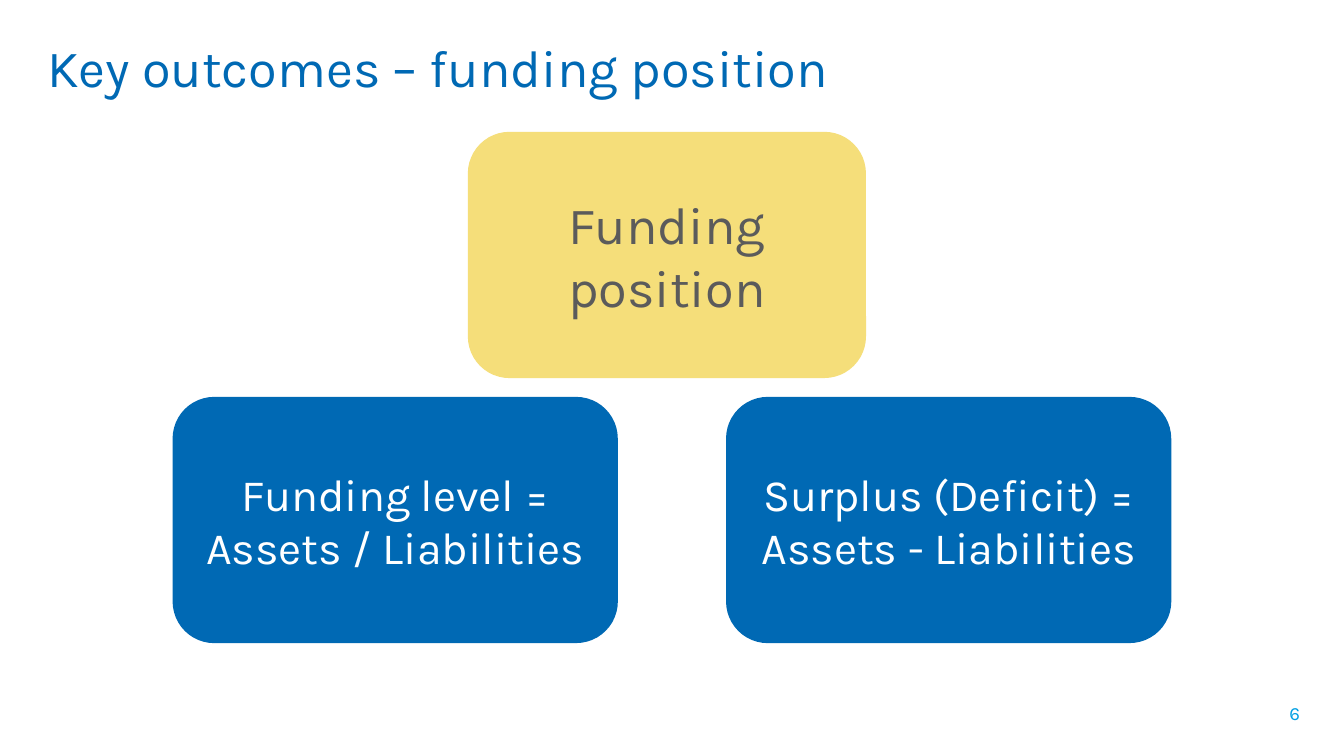
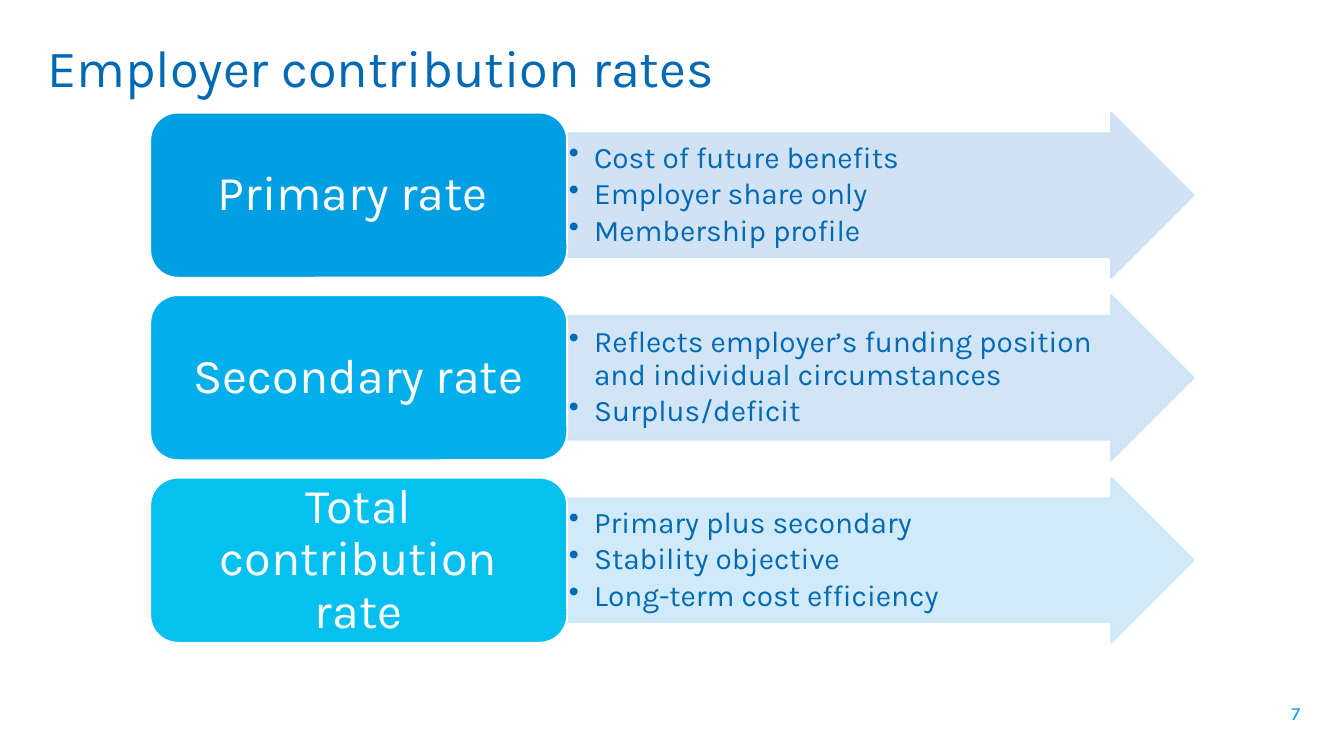
"""Build two slides on funding position and employer contribution rates."""
from lxml.etree import SubElement
from pptx import Presentation
from pptx.dml.color import RGBColor as Rgb
from pptx.enum.shapes import MSO_SHAPE as Preset
from pptx.enum.text import MSO_ANCHOR as Anchor, PP_ALIGN as Align
from pptx.oxml.ns import qn
from pptx.util import Cm, Pt

COLOURS = {
    "navy": "0069B4", "blue": "009FE3", "sky": "03AFEA", "cyan": "06C0F0",
    "yellow": "F5DE7A", "grey": "5B5B5B", "white": "FFFFFF",
    "pale navy": "CCDFF4", "pale blue": "CCE3F7", "pale cyan": "CCE8F9",
}
FONT = "Karla"


def write(frame, text, size, colour, align=Align.LEFT, anchor=Anchor.TOP,
          insets=(0.25, 0.13), spacing=None, after=0, bullet=False):
    frame.word_wrap = True
    frame.vertical_anchor = anchor
    frame.margin_left = frame.margin_right = Cm(insets[0])
    frame.margin_top = frame.margin_bottom = Cm(insets[1])
    frame.text = text
    for paragraph in frame.paragraphs:
        if bullet:
            properties = paragraph._p.get_or_add_pPr()
            properties.set("marL", str(Cm(0.48)))
            properties.set("indent", str(-Cm(0.48)))
            SubElement(properties, qn("a:buChar"), char="•")
        paragraph.alignment = align
        paragraph.line_spacing = spacing
        paragraph.space_after = Pt(after)
        for run in paragraph.runs:
            run.font.name = FONT
            run.font.size = Pt(size)
            run.font.color.rgb = Rgb.from_string(COLOURS[colour])


def add_panel(slide, preset, left, top, width, height, fill, line):
    panel = slide.shapes.add_shape(preset, Cm(left), Cm(top), Cm(width), Cm(height))
    panel.shadow.inherit = False
    panel.fill.solid()
    panel.fill.fore_color.rgb = Rgb.from_string(COLOURS[fill])
    panel.line.color.rgb = Rgb.from_string(COLOURS[line])
    panel.line.width = Pt(1)
    return panel


deck = Presentation()
deck.slide_width, deck.slide_height = Cm(25.4), Cm(14.29)

slides = []
for number, heading in [(6, "Key outcomes – funding position"),
                        (7, "Employer contribution rates")]:
    slide = deck.slides.add_slide(deck.slide_layouts[6])
    page_number = slide.shapes.add_textbox(Cm(23.55), Cm(13.13), Cm(1.27), Cm(0.76))
    write(page_number.text_frame, str(number), size=10, colour="blue", align=Align.RIGHT)
    title = slide.shapes.add_textbox(Cm(0.64), Cm(0.53), Cm(23.93), Cm(1.6))
    write(title.text_frame, heading, size=28, colour="navy", after=6)
    slides.append(slide)
outcomes, rates = slides

for left, top, width, fill, colour, size, text in [
    (8.86, 2.51, 7.49, "yellow", "grey", 28, "Funding position"),
    (3.28, 7.52, 8.38, "navy", "white", 24, "Funding level =\nAssets / Liabilities"),
    (13.74, 7.52, 8.38, "navy", "white", 24, "Surplus (Deficit) =\nAssets - Liabilities"),
]:
    measure = add_panel(outcomes, Preset.ROUNDED_RECTANGLE, left, top, width, 4.62, fill, fill)
    write(measure.text_frame, text, size=size, colour=colour,
          align=Align.CENTER, anchor=Anchor.MIDDLE)

ROW_TOP, ROW_STEP, ROW_HEIGHT = 2.13, 3.45, 3.12
NAME_LEFT, NAME_WIDTH, ARROW_WIDTH = 2.84, 7.88, 11.84
for row, (name, fill, pale, points) in enumerate([
    ("Primary rate ", "blue", "pale navy",
     ["Cost of future benefits", "Employer share only", "Membership profile"]),
    ("Secondary rate", "sky", "pale blue",
     ["Reflects employer’s funding position and individual circumstances",
      "Surplus/deficit"]),
    ("Total contribution rate", "cyan", "pale cyan",
     ["Primary plus secondary", "Stability objective", "Long-term cost efficiency"]),
]):
    top = ROW_TOP + row * ROW_STEP
    arrow = add_panel(rates, Preset.RIGHT_ARROW, NAME_LEFT + NAME_WIDTH, top,
                      ARROW_WIDTH, ROW_HEIGHT, pale, pale)
    arrow.adjustments[0] = 0.75
    arrow.adjustments[1] = 0.5
    for tint in arrow._element.spPr.iter(qn("a:srgbClr")):
        SubElement(tint, qn("a:alpha"), val="90000")
    write(arrow.text_frame, "\n".join(points), size=16, colour="navy",
          anchor=Anchor.MIDDLE, insets=(0.03, 0.03), spacing=0.9, after=2.4, bullet=True)
    rate = add_panel(rates, Preset.ROUNDED_RECTANGLE, NAME_LEFT, top,
                     NAME_WIDTH, ROW_HEIGHT, fill, "white")
    write(rate.text_frame, name, size=26, colour="white", align=Align.CENTER,
          anchor=Anchor.MIDDLE, insets=(0.28, 0.13), spacing=0.9, after=9.1)

deck.save("out.pptx")
